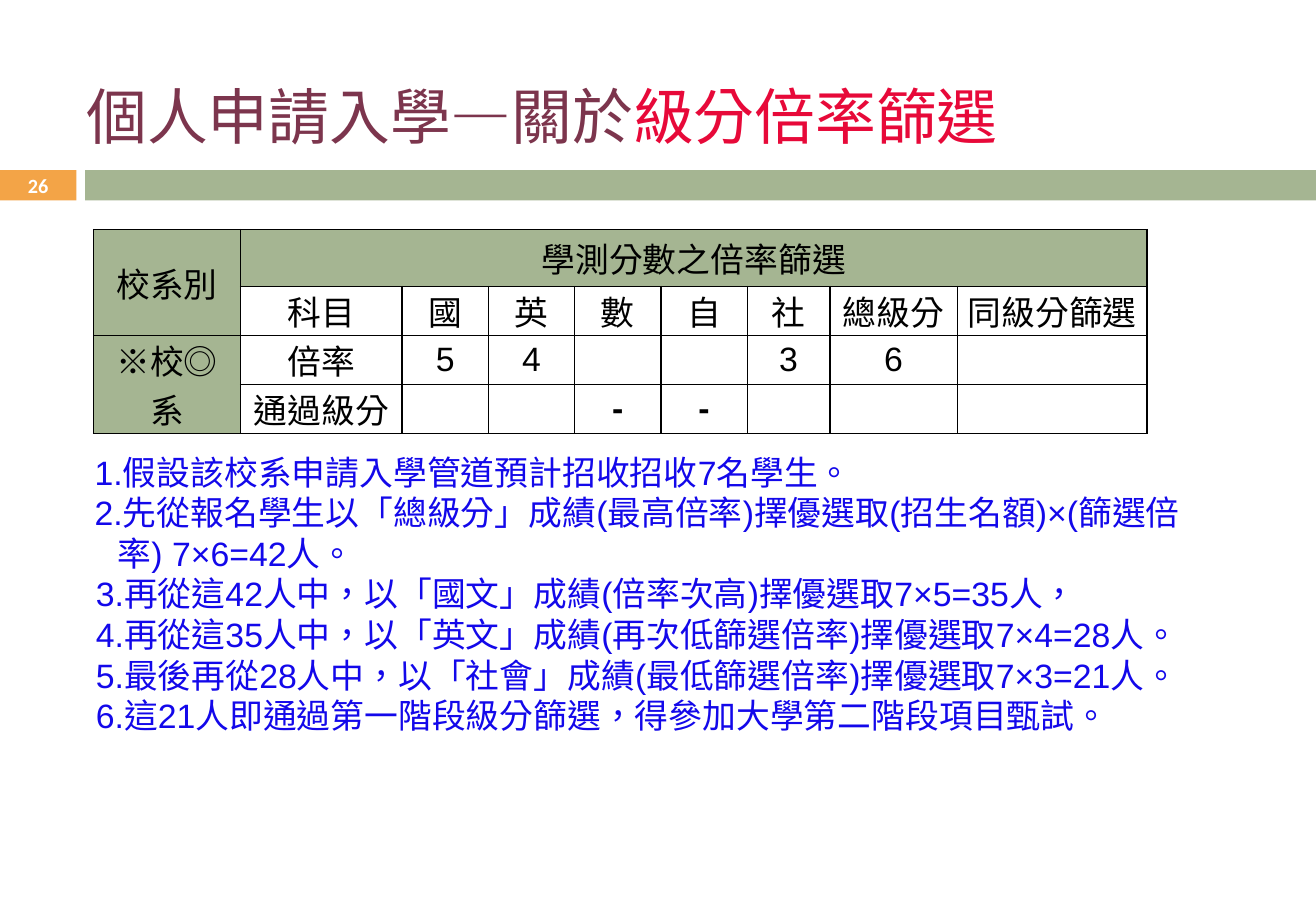
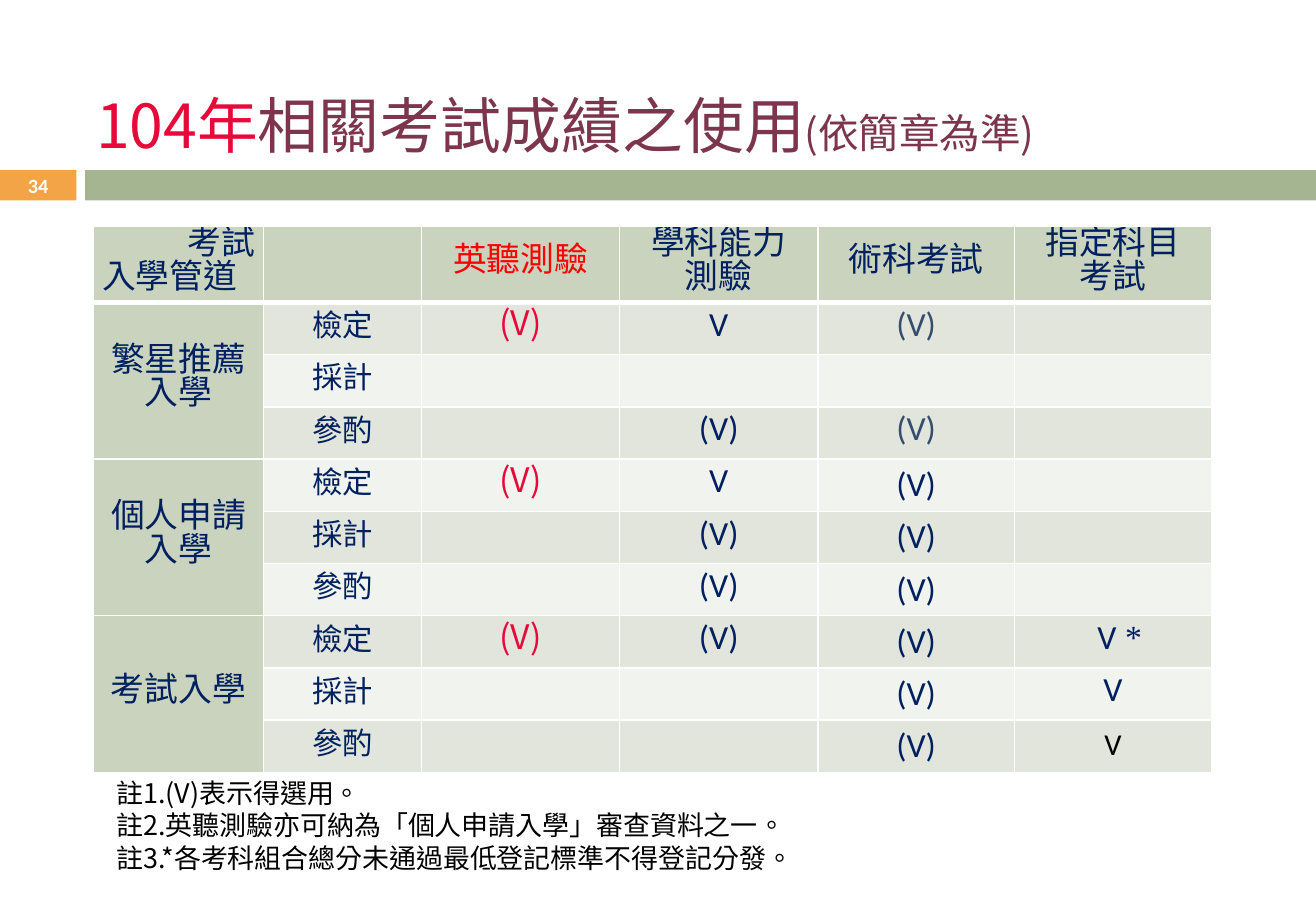
from dataclasses import dataclass
from typing import Any, Optional

import lxml.etree
import pptx
import pptx.dml.color
import pptx.enum.shapes
import pptx.enum.text
import pptx.oxml.ns
import pptx.util

Inches = pptx.util.Inches
Pt = pptx.util.Pt
ALIGN = pptx.enum.text.PP_ALIGN
MIDDLE = pptx.enum.text.MSO_ANCHOR.MIDDLE
TOP = pptx.enum.text.MSO_ANCHOR.TOP

# Shared look
CJK = "Noto Sans CJK SC"
LATIN = "Calibri"
WHITE, BLACK = "FFFFFF", "000000"
PLUM, CRIMSON, NAVY, BLUE, SLATE = "7C354D", "E70939", "002060", "1308EA", "344E6D"
ORANGE, GREEN = "F3A447", "A5B592"
HEADING_GREEN, DARK_STRIPE, LIGHT_STRIPE = "C9D3BE", "E1E5DC", "F0F3EE"


@dataclass(frozen=True)
class Span:
    """A stretch of text in one format."""
    text: str
    size: float
    color: str
    font: str = LATIN
    bold: bool = False


@dataclass(frozen=True)
class Line:
    """One paragraph; margin and indent are in inches, spacing in points."""
    spans: tuple[Span, ...]
    align: Any = ALIGN.LEFT
    spacing: Optional[float] = None
    margin: float = 0
    indent: float = 0


@dataclass(frozen=True)
class Box:
    left: float
    top: float
    width: float
    height: float

    def emu(self) -> tuple[int, ...]:
        return tuple(Inches(n) for n in (self.left, self.top, self.width, self.height))


@dataclass(frozen=True)
class Border:
    color: str
    top: float = 1
    bottom: float = 1


def rgb(color: str) -> pptx.dml.color.RGBColor:
    return pptx.dml.color.RGBColor.from_string(color)


def add_xml(parent: Any, tag: str, **attributes: str) -> Any:
    return lxml.etree.SubElement(parent, pptx.oxml.ns.qn(tag), **attributes)


def write(frame: Any, lines: list[Line]) -> None:
    """Fill a text frame with formatted paragraphs."""
    for number, line in enumerate(lines):
        paragraph = frame.add_paragraph() if number else frame.paragraphs[0]
        paragraph.alignment = line.align
        if line.spacing:
            paragraph.line_spacing = Pt(line.spacing)
        if line.margin or line.indent:
            properties = paragraph._p.get_or_add_pPr()
            properties.set("marL", str(Inches(line.margin)))
            properties.set("indent", str(Inches(line.indent)))
        for span in line.spans:
            run = paragraph.add_run()
            run.text = span.text
            run.font.size = Pt(span.size)
            run.font.bold = span.bold
            run.font.color.rgb = rgb(span.color)
            run.font.name = span.font
            properties = run._r.get_or_add_rPr()
            properties.set("lang", "zh-TW")
            add_xml(properties, "a:ea", typeface=CJK)


def add_band(slide: Any, box: Box, color: str) -> Any:
    band = slide.shapes.add_shape(pptx.enum.shapes.MSO_SHAPE.RECTANGLE, *box.emu())
    band.shadow.inherit = False
    band.fill.solid()
    band.fill.fore_color.rgb = rgb(color)
    band.line.fill.background()
    return band


def add_page(deck: Any, page: str, title: list[Span], box: Box, anchor: Any) -> Any:
    """Add a slide with its title, page number and green band."""
    slide = deck.slides.add_slide(deck.slide_layouts[5])
    heading = slide.shapes.title
    heading.left, heading.top, heading.width, heading.height = box.emu()
    heading.text_frame.auto_size = pptx.enum.text.MSO_AUTO_SIZE.NONE
    heading.text_frame.vertical_anchor = anchor
    write(heading.text_frame, [Line(tuple(title))])

    page_tag = add_band(slide, Box(0, 1.4, 0.63, 0.25), ORANGE)
    page_tag.text_frame.vertical_anchor = MIDDLE
    write(page_tag.text_frame, [Line((Span(page, 12, WHITE, bold=True),), ALIGN.CENTER)])
    add_band(slide, Box(0.7, 1.4, 10.13, 0.25), GREEN)
    return slide


def add_notes(slide: Any, box: Box, lines: list[Line]) -> None:
    notes = slide.shapes.add_textbox(*box.emu())
    notes.text_frame.word_wrap = True
    write(notes.text_frame, lines)


def add_grid(slide: Any, left: float, top: float, widths: list[float], heights: list[float]) -> Any:
    box = Box(left, top, sum(widths), sum(heights))
    grid = slide.shapes.add_table(len(heights), len(widths), *box.emu()).table
    grid.first_row = grid.horz_banding = False
    for column, width in zip(grid.columns, widths):
        column.width = Inches(width)
    for row, height in zip(grid.rows, heights):
        row.height = Inches(height)
    return grid


def fill_cell(cell: Any, lines: list[Line], fill: str, border: Border) -> None:
    cell.vertical_anchor = MIDDLE
    cell.margin_left = cell.margin_right = Inches(0.07)
    cell.margin_top = cell.margin_bottom = 0
    properties = cell._tc.get_or_add_tcPr()
    edges = {"a:lnL": 1, "a:lnR": 1, "a:lnT": border.top, "a:lnB": border.bottom}
    for tag, width in edges.items():
        edge = add_xml(properties, tag, w=str(Pt(width)))
        add_xml(add_xml(edge, "a:solidFill"), "a:srgbClr", val=border.color)
    cell.fill.solid()
    cell.fill.fore_color.rgb = rgb(fill)
    write(cell.text_frame, lines)


def build_ratio_slide(deck: Any) -> None:
    slide = add_page(deck, "26", [
        Span("個人申請入學—關於", 36, PLUM, CJK),
        Span("級分倍率篩選", 36, CRIMSON, CJK),
    ], Box(0.61, 0.6, 10.22, 0.79), TOP)

    # Screening ratios by subject
    ratios = [
        ["校系別", "學測分數之倍率篩選", "", "", "", "", "", "", ""],
        ["", "科目", "國", "英", "數", "自", "社", "總級分", "同級分篩選"],
        ["※校◎系", "倍率", "5", "4", "", "", "3", "6", ""],
        ["", "通過級分", "", "", "-", "-", "", "", ""],
    ]
    grid = add_grid(slide, 0.77, 1.89,
                    [1.21, 1.33] + [0.71] * 4 + [0.68, 1.05, 1.56], [0.47] + [0.36] * 3)
    for r, row in enumerate(ratios):
        for c, text in enumerate(row):
            span = Span(text, 20, BLACK, "Arial", bold=text == "-")
            lines = [Line((span,), ALIGN.CENTER)] if text else []
            fill = GREEN if r == 0 or c == 0 else WHITE
            fill_cell(grid.cell(r, c), lines, fill, Border(BLACK))
    for first, last in [((0, 0), (1, 0)), ((0, 1), (0, 8)), ((2, 0), (3, 0))]:
        grid.cell(*first).merge(grid.cell(*last))

    # Worked example: text, margin, indent
    steps = [
        ("1.假設該校系申請入學管道預計招收招收7名學生。", 0.39, -0.17),
        ("2.先從報名學生以「總級分」成績(最高倍率)擇優選取(招生名額)×(篩選倍", 0.39, -0.17),
        ("率) 7×6=42人。", 0.41, 0),
        ("3.再從這42人中，以「國文」成績(倍率次高)擇優選取7×5=35人，", 0.23, 0),
        ("4.再從這35人中，以「英文」成績(再次低篩選倍率)擇優選取7×4=28人。", 0.23, 0),
        ("5.最後再從28人中，以「社會」成績(最低篩選倍率)擇優選取7×3=21人。", 0.23, 0),
        ("6.這21人即通過第一階段級分篩選，得參加大學第二階段項目甄試。", 0.23, 0),
    ]
    add_notes(slide, Box(0.46, 3.67, 9.61, 2.46), [
        Line((Span(text, 20, BLUE, "Arial"),), spacing=24, margin=margin, indent=indent)
        for text, margin, indent in steps
    ])


def exam_mark(text: str, r: int, c: int) -> list[Line]:
    """Format one mark of the exam table by its row and column."""
    if not text:
        return []
    if text == "V *":
        spans = (Span("V", 20, NAVY), Span(" *", 20, NAVY, "Times New Roman"))
        return [Line(spans, ALIGN.CENTER, 20, margin=0.11)]
    if c == 2:
        span = Span(text, 20, CRIMSON, CJK)
    elif c == 4 and r <= 3:
        span = Span(text, 20, SLATE)
    elif c == 5 and r == 9:
        span = Span(text, 18, BLACK)
    else:
        span = Span(text, 18 if c == 1 else 20, NAVY)
    return [Line((span,), ALIGN.CENTER, None if c == 4 and r > 3 else 20)]


def build_exam_slide(deck: Any) -> None:
    slide = add_page(deck, "34", [
        Span("104年", 36, CRIMSON, CJK),
        Span("相關考試成績之使用", 36, PLUM, CJK),
        Span("(依簡章為準)", 24, PLUM, CJK),
    ], Box(0.69, 0.36, 9.37, 1.32), MIDDLE)

    grid = add_grid(slide, 0.77, 1.86,
                    [1.4, 1.3, 1.63, 1.63, 1.62, 1.62], [0.63] + [0.43] * 9)

    # Heading row
    headings = [["考試", "入學管道"], [], ["英聽測驗"], ["學科能力", "測驗"],
                ["術科考試"], ["指定科目", "考試"]]
    for c, heading in enumerate(headings):
        lines = []
        for number, text in enumerate(heading):
            align = ALIGN.CENTER if c else (ALIGN.LEFT if number else ALIGN.RIGHT)
            lines.append(Line((Span(text, 20, "FF0000" if c == 2 else NAVY),), align, 20))
        fill_cell(grid.cell(0, c), lines, HEADING_GREEN, Border(WHITE, bottom=3))

    # Three admission channels, each with three uses of the scores
    channels = ["繁星推薦入學", "個人申請入學", "考試入學"]
    uses = ["檢定", "採計", "參酌"]
    marks = [
        ["(V)", "V", "(V)", ""],
        ["", "", "", ""],
        ["", "(V)", "(V)", ""],
        ["(V)", "V", "(V)", ""],
        ["", "(V)", "(V)", ""],
        ["", "(V)", "(V)", ""],
        ["(V)", "(V)", "(V)", "V *"],
        ["", "", "(V)", "V"],
        ["", "", "(V)", "V"],
    ]
    for r, row in enumerate(marks, start=1):
        border = Border(WHITE, top=3 if r == 1 else 1)
        channel, use = divmod(r - 1, len(uses))
        label = [] if use else [Line((Span(channels[channel], 20, NAVY),), ALIGN.CENTER, 20)]
        fill_cell(grid.cell(r, 0), label, HEADING_GREEN, border)
        stripe = DARK_STRIPE if r % 2 else LIGHT_STRIPE
        for c, text in enumerate([uses[use], *row], start=1):
            fill_cell(grid.cell(r, c), exam_mark(text, r, c), stripe, border)
    for first in range(1, 10, len(uses)):
        grid.cell(first, 0).merge(grid.cell(first + len(uses) - 1, 0))

    # Footnotes: opening, middle and full stop
    footnotes = [
        [("註1.(V)表示得選用。", CJK)],
        [("註2.英聽測驗亦可", CJK), ("納為「個人申請入學」審查資料之一", LATIN), ("。", CJK)],
        [("註3.*", CJK), ("各考科組合總分未通過最低登記標準不得登記分發", LATIN), ("。", CJK)],
    ]
    add_notes(slide, Box(0.86, 6.35, 8.43, 0.91), [
        Line(tuple(Span(text, 16, BLACK, font) for text, font in footnote), spacing=19)
        for footnote in footnotes
    ])


def main() -> None:
    deck = pptx.Presentation()
    deck.slide_width, deck.slide_height = Inches(10.83), Inches(7.5)
    build_ratio_slide(deck)
    build_exam_slide(deck)
    deck.save("out.pptx")


if __name__ == "__main__":
    main()
